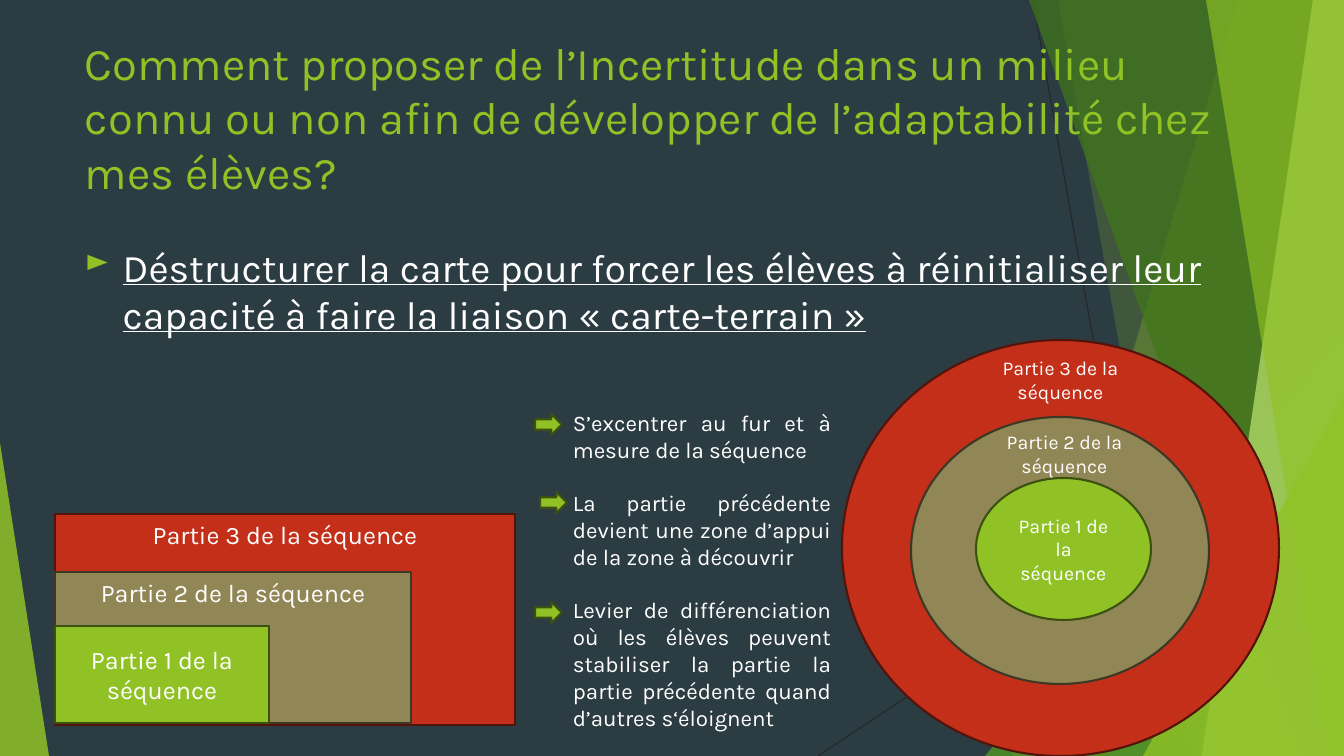
from lxml import etree
from pptx import Presentation, util as u
from pptx.dml.color import RGBColor
from pptx.enum import shapes, text
from pptx.oxml.ns import qn

PX = 914400 / 100.8  # EMU in one px
W, H = 1344, 756
LIME, WHITE = "90C226", "FFFFFF"
KIND, ALIGN = shapes.MSO_SHAPE, text.PP_ALIGN


def px(*lengths):
    return [u.Emu(round(n * PX)) for n in lengths]


def write(box, words, size=18, color=WHITE, align=ALIGN.CENTER,
          anchor=text.MSO_ANCHOR.TOP, underline=None, gap=0, bullet=None):
    frame = box.text_frame
    frame.word_wrap = True
    frame.vertical_anchor = anchor
    for i, line in enumerate(words.split("\n")):
        para = frame.add_paragraph() if i else frame.paragraphs[0]
        para.alignment = align
        if i:
            para.space_before = u.Pt(gap)
        if bullet:
            props = para._p.get_or_add_pPr()
            props.set("marL", "342900")
            props.set("indent", "-342900")
            tint = etree.SubElement(props, qn("a:buClr"))
            etree.SubElement(tint, qn("a:srgbClr"), val=LIME)
            etree.SubElement(props, qn("a:buSzPct"), val="80000")
            etree.SubElement(props, qn("a:buChar"), char=bullet)
        span = para.add_run()
        span.text = line
        span.font.name = "Karla"
        span.font.size = u.Pt(size)
        span.font.color.rgb = RGBColor.from_string(color)
        span.font.underline = underline


deck = Presentation()
deck.slide_width, deck.slide_height = px(W, H)
page = deck.slides.add_slide(deck.slide_layouts[6])
page.background.fill.solid()
page.background.fill.fore_color.rgb = RGBColor.from_string("2C3C43")

# Thin background lines
for ends in [(1033, 0, 1167, H), (W, 406, 818, H)]:
    line = page.shapes.add_connector(shapes.MSO_CONNECTOR.STRAIGHT, *px(*ends))
    line.line.color.rgb = RGBColor.from_string("262626")
    line.line.width = u.Pt(0.75)
    etree.SubElement(line._element.spPr, qn("a:effectLst"))

# Translucent facets: outline, colour, opacity in percent
right = [(W, 0), (W, H)]
facets = [
    ([(1238, 0), *right, (1012, H)], LIME, 30),
    ([(1058, 0), *right, (1192, H)], LIME, 20),
    ([(W, 336), (W, H), (985, H)], "54A021", 72),
    ([(1029, 0), *right, (1301, H)], "3F7818", 70),
    ([(1313, 0), *right, (1202, H)], "BFE471", 70),
    ([(1206, 0), *right, (1329, H)], LIME, 65),
    ([(W, 396), (W, H), (1143, H)], LIME, 80),
    ([(0, 443), (49, H), (0, H)], LIME, 85),
]
for points, color, opacity in facets:
    outline = page.shapes.build_freeform(*points[0], scale=PX)
    outline.add_line_segments(points[1:], close=True)
    facet = outline.convert_to_shape()
    facet.shadow.inherit = False
    facet.line.fill.background()
    facet.fill.solid()
    facet.fill.fore_color.rgb = RGBColor.from_string(color)
    tint = facet._element.spPr.find(qn("a:solidFill"))[0]
    etree.SubElement(tint, qn("a:alpha"), val=str(opacity * 1000))

# Title and main point
title = page.shapes.add_textbox(*px(75, 30, 1156, 145))
write(title, "Comment proposer de l’Incertitude dans un milieu connu ou non afin de "
      "développer de l’adaptabilité chez mes élèves?",
      size=32.4, color=LIME, align=ALIGN.LEFT)
body = page.shapes.add_textbox(*px(75, 238, 1195, 427))
write(body, "Déstructurer la carte pour forcer les élèves à réinitialiser leur "
      "capacité à faire la liaison « carte-terrain »",
      size=28, color="FEFEFE", align=ALIGN.LEFT, underline=True, bullet="►")

# Nested rectangles, nested circles and arrows: kind, place, fill, line, label, size
RED, OLIVE, GREEN = ("C42F1A", "52130A"), ("918655", "3D3823"), (LIME, "3C5110")
part = "Partie {} de la séquence"
solids = [
    (KIND.RECTANGLE, (55, 514, 460, 211), RED, part.format(3), 18),
    (KIND.RECTANGLE, (55, 572, 356, 151), OLIVE, part.format(2), 18),
    (KIND.RECTANGLE, (55, 626, 214, 97), GREEN, part.format(1), 18),
    (KIND.OVAL, (842, 340, 437, 416), RED, "", 14),
    (KIND.OVAL, (911, 417, 298, 267), OLIVE, "", 14),
    (KIND.OVAL, (976, 478, 175, 142), GREEN, part.format(1), 14),
]
for x, y in [(535, 414), (540, 492), (535, 602)]:
    solids.append((KIND.RIGHT_ARROW, (x, y, 27, 21), GREEN, "", 14))
for kind, place, (fill, edge), label, size in solids:
    solid = page.shapes.add_shape(kind, *px(*place))
    solid.shadow.inherit = False
    solid.fill.solid()
    solid.fill.fore_color.rgb = RGBColor.from_string(fill)
    solid.line.color.rgb = RGBColor.from_string(edge)
    solid.line.width = u.Pt(1.5)
    if label:
        inner = fill == LIME
        write(solid, label, size=size,
              anchor=text.MSO_ANCHOR.MIDDLE if inner else text.MSO_ANCHOR.TOP)

# Labels of the outer rings
for x, y, number in [(971, 425, 2), (967, 351, 3)]:
    write(page.shapes.add_textbox(*px(x, y, 187, 89)), part.format(number), size=14)

# Explanations beside the arrows
notes = page.shapes.add_textbox(*px(563, 404, 278, 336))
write(notes, "S’excentrer au fur et à mesure de la séquence\n"
      "La partie précédente devient une zone d’appui de la zone à découvrir\n"
      "Levier de différenciation où les élèves peuvent stabiliser la partie "
      "la partie précédente quand d’autres s‘éloignent",
      size=16, align=ALIGN.JUSTIFY, gap=19)

deck.save("out.pptx")
